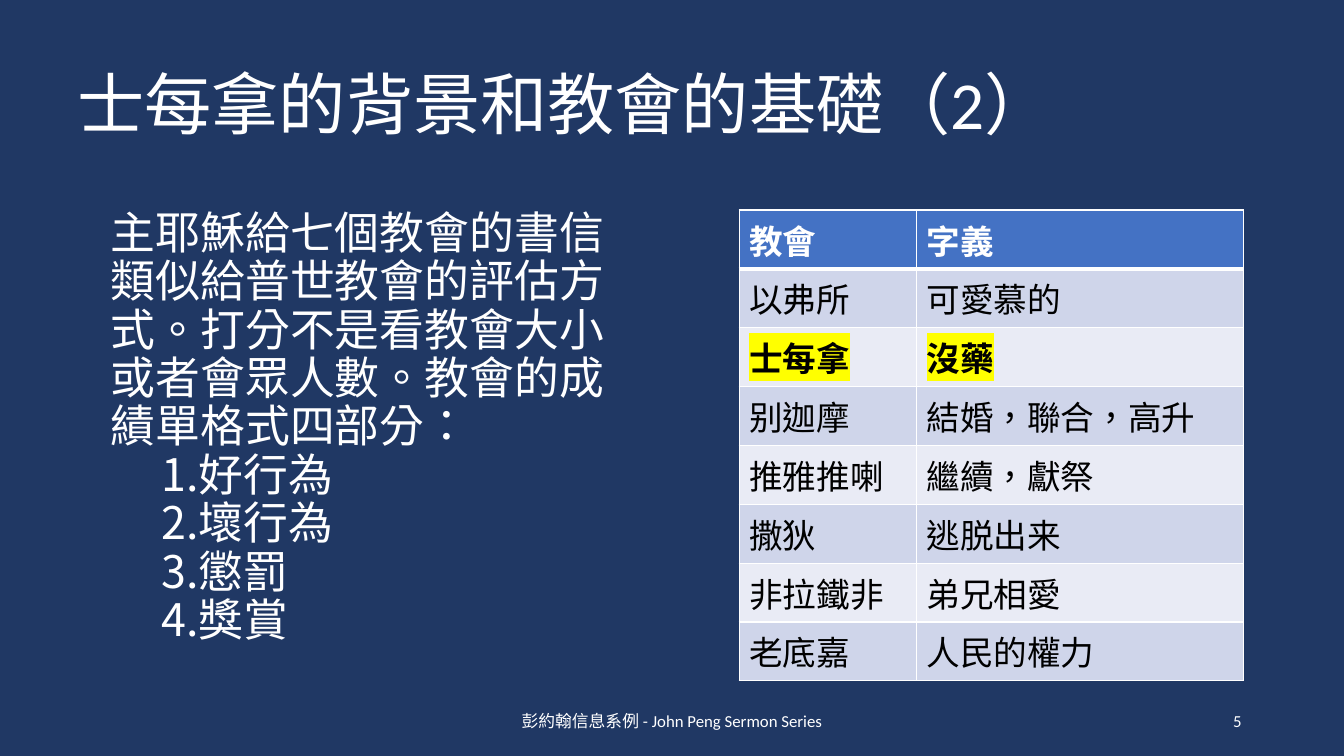
from dataclasses import dataclass

from lxml import etree
from pptx import Presentation
from pptx.dml.color import RGBColor
from pptx.enum.lang import MSO_LANGUAGE_ID
from pptx.enum.text import MSO_ANCHOR, MSO_AUTO_SIZE, PP_ALIGN
from pptx.oxml.ns import qn
from pptx.slide import Slide
from pptx.table import _Cell
from pptx.text.text import TextFrame, _Paragraph
from pptx.util import Emu, Inches, Pt

LEFT, CENTER, RIGHT = PP_ALIGN.LEFT, PP_ALIGN.CENTER, PP_ALIGN.RIGHT
MIDDLE = MSO_ANCHOR.MIDDLE
NO_FIT = MSO_AUTO_SIZE.NONE
TRADITIONAL = MSO_LANGUAGE_ID.TRADITIONAL_CHINESE

NAVY = RGBColor(0x20, 0x38, 0x64)
WHITE = RGBColor(0xFF, 0xFF, 0xFF)
BLACK = RGBColor(0x00, 0x00, 0x00)
HEADER_BLUE = RGBColor(0x44, 0x72, 0xC4)
BAND_DARK = RGBColor(0xCF, 0xD5, 0xEA)
BAND_LIGHT = RGBColor(0xE9, 0xEB, 0xF5)
YELLOW = RGBColor(0xFF, 0xFF, 0x00)

FONT = "Calibri"
COLUMNS, ROWS = 160, 90
UNIT = Inches(1 / 12)

TITLE = "士每拿的背景和教會的基礎（2）"
INTRO = (
    "主耶穌給七個教會的書信類似給普世教會的評估方式。"
    "打分不是看教會大小或者會眾人數。教會的成績單格式四部分："
)
REPORT_PARTS = ["好行為", "壞行為", "懲罰", "獎賞"]


@dataclass(frozen=True)
class Area:
    column: float
    row: float
    columns: float
    rows: float

    def box(self) -> tuple[Emu, Emu, Emu, Emu]:
        left, top, width, height = (
            Emu(round(length * UNIT))
            for length in (self.column, self.row, self.columns, self.rows)
        )
        return left, top, width, height


@dataclass(frozen=True)
class FooterItem:
    text: str
    area: Area
    alignment: PP_ALIGN


@dataclass(frozen=True)
class Church:
    name: str
    meaning: str
    highlighted: bool = False


TITLE_AREA = Area(8, 7.2, 121, 11.2)
BODY_AREA = Area(12, 22, 62, 58)
TABLE_AREA = Area(88, 25, 60, 53.9)
NAME_COLUMNS = 21.1

FOOTER = [
    FooterItem("彭約翰信息系例 - John Peng Sermon Series", Area(53, 83.4, 54, 4.8), CENTER),
    FooterItem("5", Area(113, 83.4, 36, 4.8), RIGHT),
]

CHURCHES = [
    Church("教會", "字義"),
    Church("以弗所", "可愛慕的"),
    Church("士每拿", "沒藥", highlighted=True),
    Church("别迦摩", "結婚，聯合，高升"),
    Church("推雅推喇", "繼續，獻祭"),
    Church("撒狄", "逃脱出来"),
    Church("非拉鐵非", "弟兄相愛"),
    Church("老底嘉", "人民的權力"),
]


def format_runs(
    paragraph: _Paragraph, size: float, color: RGBColor = WHITE, bold: bool = False
) -> None:
    for run in paragraph.runs:
        run.font.size = Pt(size)
        run.font.name = FONT
        run.font.bold = bold
        run.font.color.rgb = color
        run.font.language_id = TRADITIONAL


def prepare_frame(frame: TextFrame) -> None:
    frame.word_wrap = True
    frame.auto_size = NO_FIT
    frame.vertical_anchor = MIDDLE


def set_marker(paragraph: _Paragraph, numbered: bool) -> None:
    properties = paragraph._p.get_or_add_pPr()
    properties.set("marL", str(Inches(0.56) if numbered else 0))
    properties.set("indent", str(Inches(-0.06) if numbered else 0))
    if numbered:
        etree.SubElement(properties, qn("a:buFont"), typeface="+mj-lt")
        etree.SubElement(properties, qn("a:buAutoNum"), type="arabicPeriod")
    else:
        etree.SubElement(properties, qn("a:buNone"))


def fill_placeholder(
    slide: Slide, index: int, area: Area, lines: list[str], size: float
) -> TextFrame:
    placeholder = slide.placeholders[index]
    placeholder.left, placeholder.top, placeholder.width, placeholder.height = area.box()
    frame = placeholder.text_frame
    frame.text = "\n".join(lines)
    prepare_frame(frame)
    for paragraph in frame.paragraphs:
        paragraph.alignment = LEFT
        paragraph.line_spacing = 0.9
        paragraph.space_before = Pt(0)
        format_runs(paragraph, size)
    return frame


def add_footer_item(slide: Slide, item: FooterItem) -> None:
    frame = slide.shapes.add_textbox(*item.area.box()).text_frame
    frame.text = item.text
    prepare_frame(frame)
    frame.paragraphs[0].alignment = item.alignment
    format_runs(frame.paragraphs[0], 12)


def add_color(parent: etree._Element, color: RGBColor) -> None:
    etree.SubElement(parent, qn("a:srgbClr"), val=str(color))


def add_borders(cell: _Cell, top: float, bottom: float) -> None:
    properties = cell._tc.get_or_add_tcPr()
    for side, width in (("L", 1), ("R", 1), ("T", top), ("B", bottom)):
        border = etree.SubElement(properties, qn(f"a:ln{side}"), w=str(Pt(width)))
        add_color(etree.SubElement(border, qn("a:solidFill")), WHITE)


def highlight(paragraph: _Paragraph) -> None:
    for run in paragraph.runs:
        properties = run._r.get_or_add_rPr()
        marker = etree.SubElement(properties, qn("a:highlight"))
        add_color(marker, YELLOW)
        properties.find(qn("a:solidFill")).addnext(marker)


def add_church_table(slide: Slide) -> None:
    table = slide.shapes.add_table(len(CHURCHES), 2, *TABLE_AREA.box()).table
    table.columns[0].width = Emu(round(NAME_COLUMNS * UNIT))
    table.columns[1].width = Emu(round((TABLE_AREA.columns - NAME_COLUMNS) * UNIT))
    for row, church in enumerate(CHURCHES):
        header = row == 0
        band = BAND_DARK if row % 2 else BAND_LIGHT
        for column, text in enumerate((church.name, church.meaning)):
            cell = table.cell(row, column)
            cell.text_frame.text = text
            add_borders(cell, 3 if row == 1 else 1, 3 if header else 1)
            cell.fill.solid()
            cell.fill.fore_color.rgb = HEADER_BLUE if header else band
            paragraph = cell.text_frame.paragraphs[0]
            format_runs(
                paragraph, 24, WHITE if header else BLACK, header or church.highlighted
            )
            if church.highlighted:
                highlight(paragraph)


def main() -> None:
    presentation = Presentation()
    presentation.slide_width = COLUMNS * UNIT
    presentation.slide_height = ROWS * UNIT
    slide = presentation.slides.add_slide(presentation.slide_layouts[1])
    slide.background.fill.solid()
    slide.background.fill.fore_color.rgb = NAVY

    fill_placeholder(slide, 0, TITLE_AREA, [TITLE], 48)
    report = fill_placeholder(slide, 1, BODY_AREA, [INTRO, *REPORT_PARTS], 32)
    for position, paragraph in enumerate(report.paragraphs):
        set_marker(paragraph, numbered=position > 0)
    for item in FOOTER:
        add_footer_item(slide, item)
    add_church_table(slide)
    presentation.save("out.pptx")


if __name__ == "__main__":
    main()
